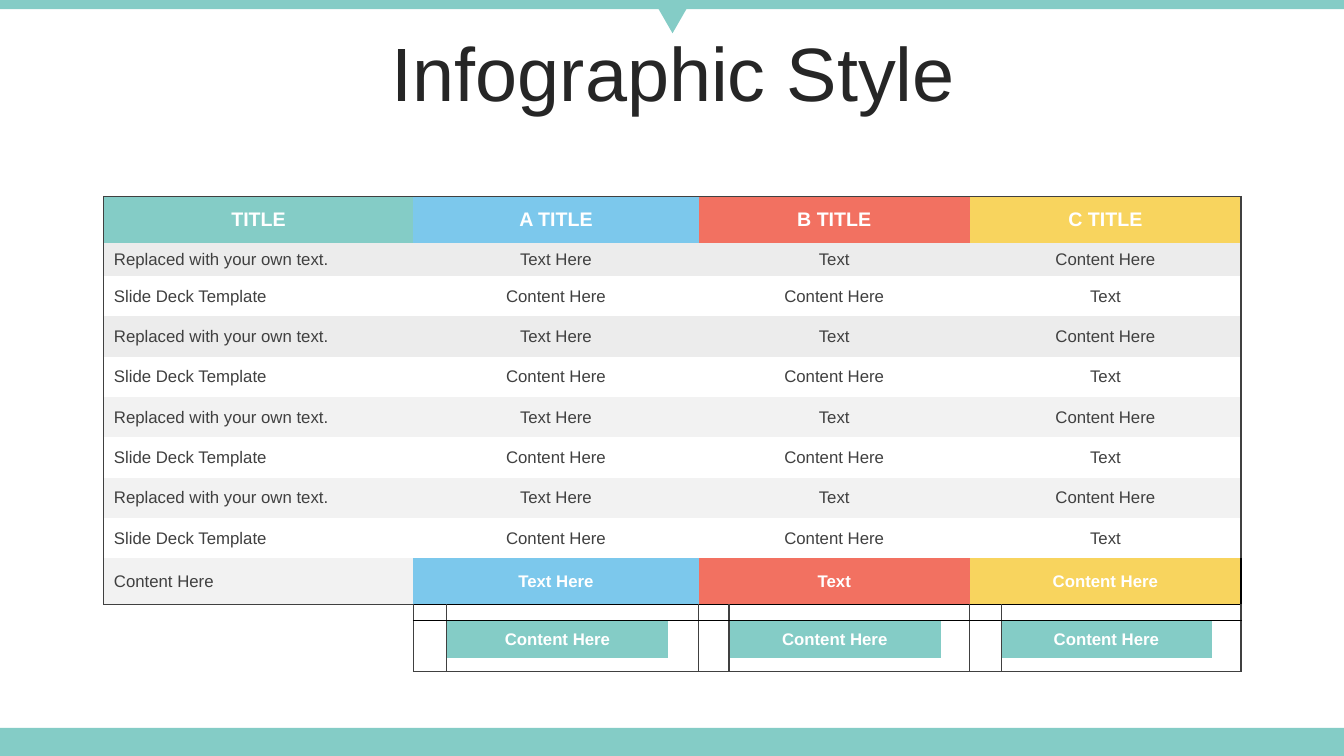
from itertools import product

from lxml.etree import SubElement
from pptx import Presentation
from pptx.dml.color import RGBColor
from pptx.enum.shapes import MSO_SHAPE as Preset
from pptx.enum.text import MSO_ANCHOR as Anchor, PP_ALIGN as Align
from pptx.oxml.ns import qn
from pptx.oxml.xmlchemy import OxmlElement
from pptx.util import Inches, Pt

TEAL, WHITE, DARK, BLACK = "84CCC6", "FFFFFF", "404040", "000000"
ACCENTS = ["7CC8EC", "F27161", "F8D45E"]
GROUP_STARTS = [1, 4, 7]
COLUMN_WIDTHS = [3.07, 0.33, 2.2, 0.3, 0.3, 2.1, 0.29, 0.31, 2.09, 0.29]
ROW_HEIGHTS = [0.46, 0.33] + [0.4] * 7 + [0.46, 0.16, 0.37, 0.13]
SUMMARY_ROW, BOX_TOP, BUTTON_ROW, BOX_BOTTOM = 9, 10, 11, 12
BODY_ROWS = [
    ["Replaced with your own text.", "Text Here", "Text", "Content Here"],
    ["Slide Deck Template", "Content Here", "Content Here", "Text"],
]
NO_STYLE = "{2D5ABB26-0587-4C30-8999-92F81FD0307C}"


def color(value):
    return RGBColor.from_string(value)


class InfographicSlide:
    font_name = "Arial"

    def __init__(self, presentation):
        self.slide = presentation.slides.add_slide(presentation.slide_layouts[6])
        self.borders = {}

    def shape(self, preset, left, top, width, height, rotation=0):
        shape = self.slide.shapes.add_shape(
            preset, Inches(left), Inches(top), Inches(width), Inches(height))
        shape.shadow.inherit = False
        shape.fill.solid()
        shape.fill.fore_color.rgb = color(TEAL)
        shape.line.fill.background()
        shape.rotation = rotation

    def set_text(self, paragraph, text, size, text_color, bold=False, align=Align.CENTER):
        paragraph.text = text
        paragraph.alignment = align
        font = paragraph.runs[0].font
        font.name, font.size, font.bold = self.font_name, Pt(size), bold
        font.color.rgb = color(text_color)

    def title(self, text, left, top, width, height):
        box = self.slide.shapes.add_textbox(
            Inches(left), Inches(top), Inches(width), Inches(height))
        frame = box.text_frame
        frame.word_wrap = True
        frame.vertical_anchor = Anchor.MIDDLE
        self.set_text(frame.paragraphs[0], text, 54, "262626")
        frame.paragraphs[0].line_spacing = 0.9

    def table(self, left, top):
        frame = self.slide.shapes.add_table(
            len(ROW_HEIGHTS), len(COLUMN_WIDTHS), Inches(left), Inches(top),
            Inches(sum(COLUMN_WIDTHS)), Inches(sum(ROW_HEIGHTS)))
        self.grid = frame.table
        self.grid.first_row = self.grid.horz_banding = False
        self.grid._tbl.tblPr.find(qn("a:tableStyleId")).text = NO_STYLE
        for column, width in zip(self.grid.columns, COLUMN_WIDTHS):
            column.width = Inches(width)
        for row, height in zip(self.grid.rows, ROW_HEIGHTS):
            row.height = Inches(height)
        for cell in self.grid.iter_cells():
            cell.fill.background()
            cell.margin_top = cell.margin_bottom = 0
            SubElement(cell.text_frame.paragraphs[0]._p, qn("a:endParaRPr"), sz="100")

    def fill(self, row, column, fill):
        cell = self.grid.cell(row, column)
        if fill:
            cell.fill.solid()
            cell.fill.fore_color.rgb = color(fill)
        return cell

    def cell(self, row, column, text, fill, text_color, size=12, bold=False, align=Align.CENTER):
        cell = self.fill(row, column, fill)
        cell.vertical_anchor = Anchor.MIDDLE
        cell.margin_top = cell.margin_bottom = Inches(0.05)
        self.set_text(cell.text_frame.paragraphs[0], text, size, text_color, bold, align)

    def merge(self, row, column, last_row, last_column):
        self.grid.cell(row, column).merge(self.grid.cell(last_row, last_column))

    def border(self, row, column, side, line_color):
        self.borders.setdefault((row, column), {})[side] = line_color

    def outline(self, top, left, bottom, right):
        for row in range(top, bottom + 1):
            self.border(row, left, "L", DARK)
            self.border(row, right, "R", DARK)
        for column in range(left, right + 1):
            self.border(top, column, "T", DARK)
            self.border(bottom, column, "B", DARK)

    def draw_borders(self):
        for (row, column), sides in self.borders.items():
            properties = self.grid.cell(row, column)._tc.get_or_add_tcPr()
            ordered = [side for side in "LRTB" if side in sides]
            for position, side in enumerate(ordered):
                line = OxmlElement(f"a:ln{side}")
                line.set("w", str(Pt(1)))
                solid = SubElement(line, qn("a:solidFill"))
                SubElement(solid, qn("a:srgbClr"), val=sides[side])
                properties.insert(position, line)


def fill_main_table(page):
    page.cell(0, 0, "TITLE", TEAL, WHITE, 14, True)
    for start, letter, accent in zip(GROUP_STARTS, "ABC", ACCENTS):
        page.cell(0, start, f"{letter} TITLE", accent, WHITE, 14, True)
    for row in range(1, SUMMARY_ROW):
        stripe = None if row % 2 == 0 else "ECECEC" if row < 5 else "F2F2F2"
        label, *values = BODY_ROWS[(row - 1) % 2]
        page.cell(row, 0, label, stripe, DARK, align=Align.LEFT)
        for start, value in zip(GROUP_STARTS, values):
            page.cell(row, start, value, stripe, DARK)
    page.cell(SUMMARY_ROW, 0, "Content Here", "F2F2F2", DARK, align=Align.LEFT)
    for start, value, accent in zip(GROUP_STARTS, BODY_ROWS[0][1:], ACCENTS):
        page.cell(SUMMARY_ROW, start, value, accent, WHITE, bold=True)
    for row, start in product(range(BOX_TOP), GROUP_STARTS):
        page.merge(row, start, row, start + 2)
    page.outline(0, 0, SUMMARY_ROW, GROUP_STARTS[-1])


def fill_button_boxes(page):
    page.merge(BOX_TOP, 0, BOX_BOTTOM, 0)
    page.border(BOX_TOP, 0, "T", DARK)
    page.border(BOX_TOP, 0, "R", DARK)
    for row, column in product(range(BOX_TOP, BOX_BOTTOM + 1), range(1, 10)):
        page.fill(row, column, WHITE)
    for start in GROUP_STARTS:
        page.cell(BUTTON_ROW, start + 1, "Content Here", TEAL, WHITE, bold=True)
        page.outline(BOX_TOP, start, BOX_BOTTOM, start + 2)
        page.border(SUMMARY_ROW, start, "B", BLACK)
        for column in range(start, start + 3):
            page.border(BOX_TOP, column, "T", BLACK)
    page.border(SUMMARY_ROW, GROUP_STARTS[-1], "R", BLACK)


def main():
    presentation = Presentation()
    presentation.slide_width = Inches(13.33)
    presentation.slide_height = Inches(7.5)
    page = InfographicSlide(presentation)
    page.shape(Preset.RECTANGLE, 0, 7.22, 13.33, 0.28)
    page.shape(Preset.RECTANGLE, 0, 0, 13.33, 0.09)
    page.shape(Preset.ISOSCELES_TRIANGLE, 6.48, 0, 0.38, 0.33, 180)
    page.title("Infographic Style", 0.35, 0.37, 12.66, 0.79)
    page.table(1.03, 1.95)
    fill_main_table(page)
    fill_button_boxes(page)
    page.draw_borders()
    presentation.save("out.pptx")


if __name__ == "__main__":
    main()
